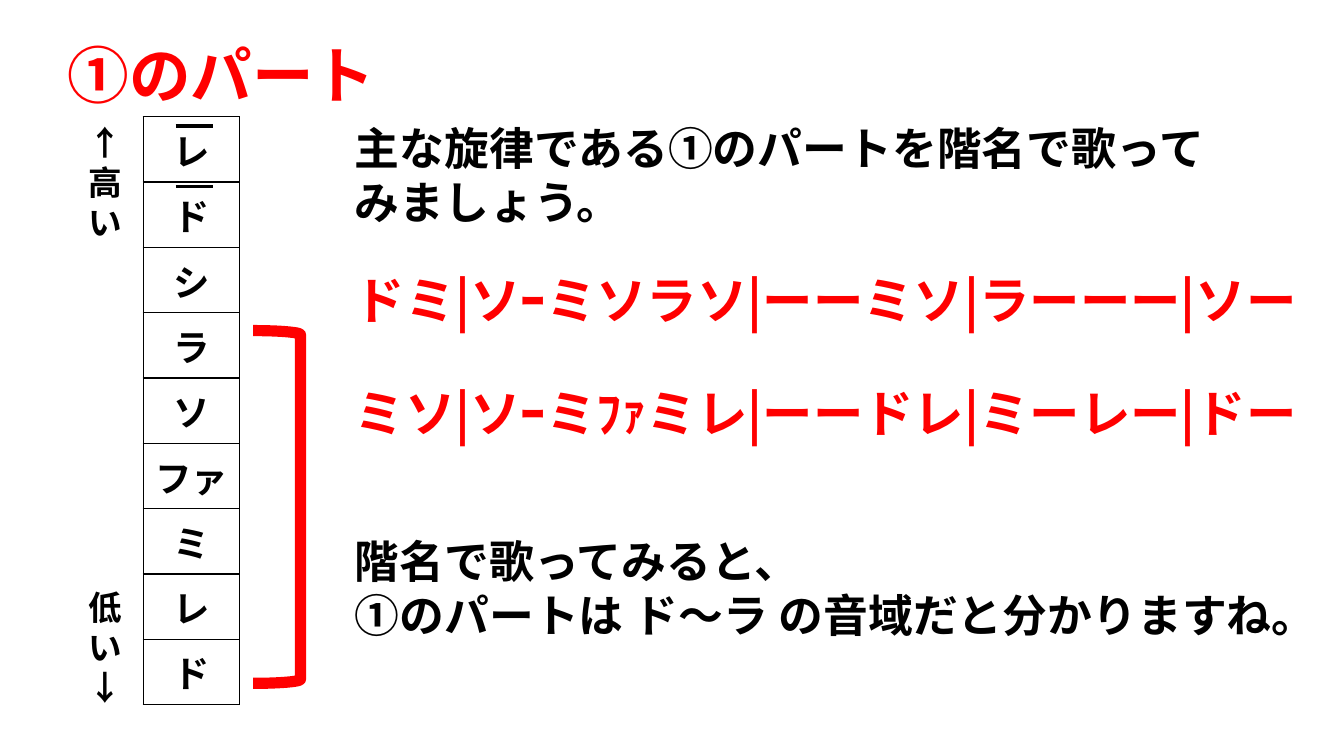
from dataclasses import dataclass

from lxml.etree import SubElement
from pptx import Presentation
from pptx.dml.color import RGBColor
from pptx.enum.shapes import MSO_CONNECTOR as Connector, MSO_SHAPE as Preset
from pptx.enum.text import MSO_ANCHOR as Anchor, MSO_AUTO_SIZE as AutoSize, PP_ALIGN as Align
from pptx.oxml.ns import qn
from pptx.util import Inches, Pt

COLUMNS, ROWS = 160, 90


@dataclass(frozen=True)
class Theme:
    font: str = "Noto Sans CJK JP"
    title_font: str = "Arial"
    ink: RGBColor = RGBColor(0, 0, 0)
    accent: RGBColor = RGBColor(255, 0, 0)
    paper: RGBColor = RGBColor(255, 255, 255)
    title_size: int = 44
    melody_size: int = 36
    body_size: int = 32
    note_size: int = 26
    label_size: int = 24
    border: float = 1
    overline: float = 2.25
    bracket: float = 8


class SlideBuilder:
    """Places elements on a slide; lengths are grid columns and rows."""

    def __init__(self, presentation, theme):
        self.theme = theme
        self.column = presentation.slide_width / COLUMNS
        self.row = presentation.slide_height / ROWS
        self.slide = presentation.slides.add_slide(presentation.slide_layouts[5])
        self.shapes = self.slide.shapes

    def box(self, left, top, width, height):
        return (round(left * self.column), round(top * self.row),
                round(width * self.column), round(height * self.row))

    def style(self, paragraph, size, color, font=None):
        for run in paragraph.runs:
            run.font.size = Pt(size)
            run.font.bold = True
            run.font.color.rgb = color
            run.font.name = font or self.theme.font
            properties = run.font._element
            SubElement(properties, qn("a:ea")).set("typeface", self.theme.font)

    def title(self, text, *area):
        shape = self.shapes.title
        shape.left, shape.top, shape.width, shape.height = self.box(*area)
        frame = shape.text_frame
        frame.text = text
        frame.word_wrap = True
        frame.vertical_anchor = Anchor.MIDDLE
        paragraph = frame.paragraphs[0]
        paragraph.alignment = Align.LEFT
        paragraph.line_spacing = 0.9
        self.style(paragraph, self.theme.title_size, self.theme.accent, self.theme.title_font)

    def text(self, text, size, color, *area):
        frame = self.shapes.add_textbox(*self.box(*area)).text_frame
        frame.word_wrap = True
        frame.auto_size = AutoSize.SHAPE_TO_FIT_TEXT
        frame.text = text
        for paragraph in frame.paragraphs:
            self.style(paragraph, size, color)

    def bracket(self, *area):
        shape = self.shapes.add_shape(Preset.RIGHT_BRACKET, *self.box(*area))
        shape.shadow.inherit = False
        shape.fill.background()
        shape.line.color.rgb = self.theme.accent
        shape.line.width = Pt(self.theme.bracket)

    def overline(self, left, top, width):
        x, y, length, _ = self.box(left, top, width, 0)
        line = self.shapes.add_connector(Connector.STRAIGHT, x, y, x + length, y)
        line.line.color.rgb = self.theme.ink
        line.line.width = Pt(self.theme.overline)
        SubElement(line._element.spPr, qn("a:effectLst"))

    def note_ladder(self, notes, *area):
        table = self.shapes.add_table(len(notes), 1, *self.box(*area)).table
        table.first_row = table.horz_banding = False
        for index, note in enumerate(notes):
            cell = table.cell(index, 0)
            cell.text = note
            cell.vertical_anchor = Anchor.MIDDLE
            paragraph = cell.text_frame.paragraphs[0]
            paragraph.alignment = Align.CENTER
            self.style(paragraph, self.theme.note_size, self.theme.ink)
            self.cell_borders(cell)
            cell.fill.solid()
            cell.fill.fore_color.rgb = self.theme.paper

    def cell_borders(self, cell):
        properties = cell._tc.get_or_add_tcPr()
        for side in ("lnL", "lnR", "lnT", "lnB"):
            line = SubElement(properties, qn(f"a:{side}"), w=str(Pt(self.theme.border)))
            fill = SubElement(line, qn("a:solidFill"))
            SubElement(fill, qn("a:srgbClr"), val=str(self.theme.ink))


def main():
    presentation = Presentation()
    presentation.slide_width, presentation.slide_height = Inches(13.33), Inches(7.5)
    theme = Theme()
    builder = SlideBuilder(presentation, theme)

    builder.title("①のパート", 6.84, 0.6, 39.6, 17.4)

    text_left = 41.05
    for top, melody in ((31.44, "ドミ|ソｰミソラソ|ーーミソ|ラーーー|ソー"),
                        (44.88, "ミソ|ソｰミﾌｧミレ|ーードレ|ミーレー|ドー")):
        builder.text(melody, theme.melody_size, theme.accent, text_left, top, 117.6, 8.5)
    for top, sentence in ((13.8, "主な旋律である①のパートを階名で歌って\nみましょう。"),
                          (63, "階名で歌ってみると、\n①のパートは ド～ラ の音域だと分かりますね。")):
        builder.text(sentence, theme.body_size, theme.ink, text_left, top, 113.4, 14.16)

    notes = ("レ", "ド", "シ", "ラ", "ソ", "ファ", "ミ", "レ", "ド")
    builder.note_ladder(notes, 17.05, 13.9, 11.5, 70)
    for top in (15, 22.2):
        builder.overline(20.9, top, 4.44)
    for top, label in ((13.9, "↑高い"), (69.24, "低い↓")):
        builder.text(label, theme.label_size, theme.ink, 9.36, top, 6.12, 15.7)
    builder.bracket(30.13, 39.36, 5.64, 42)

    presentation.save("out.pptx")


if __name__ == "__main__":
    main()
